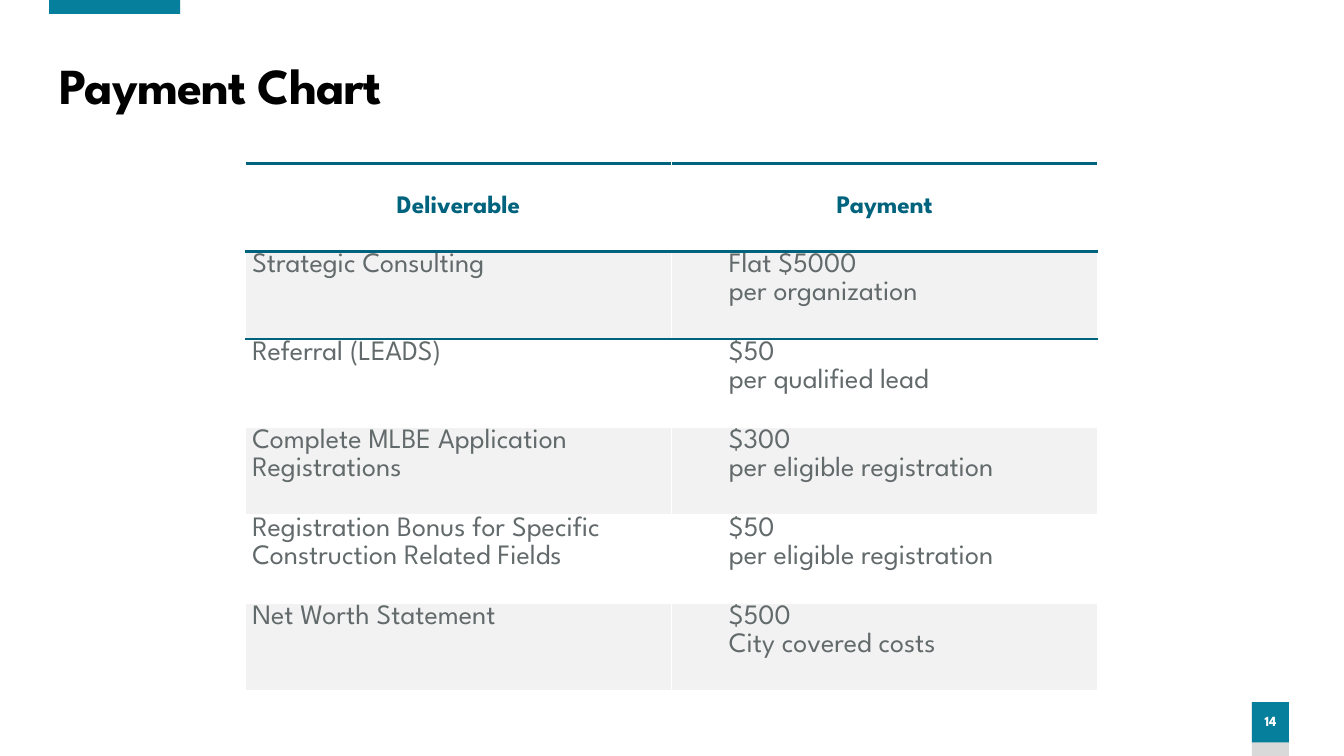
from lxml import etree
from pptx import Presentation
from pptx import util as u
from pptx.dml.color import RGBColor
from pptx.enum import shapes, text
from pptx.oxml.ns import qn

Pt = u.Pt
TEAL = RGBColor(0x06, 0x7F, 0x9C)
DEEP = RGBColor(0x00, 0x63, 0x7E)
GREY = RGBColor(0x63, 0x6A, 0x6B)
BAND = RGBColor(0xF2, 0xF2, 0xF2)
FOOT = RGBColor(0xD9, 0xD9, 0xD9)
WHITE = RGBColor(0xFF, 0xFF, 0xFF)
BLACK = RGBColor(0, 0, 0)
FACE = "League Spartan"
MID = text.MSO_ANCHOR.MIDDLE
MARGIN = dict(margin_left=Pt(5), margin_right=Pt(5), margin_top=0, margin_bottom=0)

ROWS = [
    ("Deliverable", "Payment"),
    ("Strategic Consulting", "Flat $5000\nper organization"),
    ("Referral (LEADS)", "$50\nper qualified lead"),
    ("Complete MLBE Application Registrations", "$300\nper eligible registration"),
    ("Registration Bonus for Specific Construction Related Fields",
     "$50\nper eligible registration"),
    ("Net Worth Statement", "$500\nCity covered costs"),
]


def put(item, vals):
    for key, val in vals.items():
        setattr(item, key, val)


def write(frame, words, size, color, bold=True, indent=0, **form):
    """Fill a text frame, one paragraph per line of words."""
    for i, line in enumerate(words.split("\n")):
        para = frame.add_paragraph() if i else frame.paragraphs[0]
        put(para, form)
        if indent:
            props = para._p.get_or_add_pPr()
            props.set("lvl", "1")
            props.set("marL", str(Pt(indent)))
            props.set("indent", "0")
        run = para.add_run()
        run.text = line
        put(run.font, dict(name=FACE, size=Pt(size), bold=bold))
        run.font.color.rgb = color


def block(slide, x, y, w, h, color):
    box = slide.shapes.add_shape(shapes.MSO_SHAPE.RECTANGLE, Pt(x), Pt(y), Pt(w), Pt(h))
    box.shadow.inherit = False
    box.fill.solid()
    box.fill.fore_color.rgb = color
    box.line.fill.background()
    return box


def edge(cell, side, color, width):
    props = cell._tc.get_or_add_tcPr()
    line = etree.SubElement(props, qn("a:ln" + side), w=str(Pt(width)))
    fill = etree.SubElement(line, qn("a:solidFill"))
    etree.SubElement(fill, qn("a:srgbClr"), val=str(color))


def head(slide, x, y, w, h):
    # Accent tab at the top edge
    block(slide, x, 0, 93.6, 10, TEAL)
    # Title
    frame = slide.shapes.add_textbox(Pt(x), Pt(y), Pt(w), Pt(h)).text_frame
    put(frame, dict(word_wrap=True, vertical_anchor=MID))
    write(frame, "Payment Chart", 36, BLACK, line_spacing=0.9)
    frame.paragraphs[0].runs[0].font._element.set("spc", "-60")


def badge(slide, x, y, w, h):
    # Page number on a grey foot
    block(slide, x, y, w, h, FOOT)
    frame = block(slide, x, y, w, 28.8, TEAL).text_frame
    put(frame, dict(margin_left=0, margin_right=0, vertical_anchor=MID))
    write(frame, "14", 10, WHITE, alignment=text.PP_ALIGN.CENTER, line_spacing=0.9)


def chart(slide, x, y, w, h):
    # Payment table: equal rows and columns
    grid = slide.shapes.add_table(len(ROWS), 2, Pt(x), Pt(y), Pt(w), Pt(h)).table
    put(grid, dict(first_row=False, horz_banding=False))
    for col in grid.columns:
        col.width = Pt(w / 2)
    for r, pair in enumerate(ROWS):
        grid.rows[r].height = Pt(h / len(ROWS))
        for c, words in enumerate(pair):
            cell = grid.cell(r, c)
            # Teal rules bound the header and the first body row
            for side, rule in (("L", False), ("R", False), ("T", r < 3), ("B", r < 2)):
                edge(cell, side, DEEP if rule else WHITE, 2.25 if rule else 1)
            if r % 2:
                cell.fill.solid()
                cell.fill.fore_color.rgb = BAND
            else:
                cell.fill.background()
            if r == 0:
                cell.vertical_anchor = MID
                write(cell.text_frame, words, 18, DEEP, alignment=text.PP_ALIGN.CENTER)
            else:
                put(cell, MARGIN)
                write(cell.text_frame, words, 20, GREY, False, 36 * c, line_spacing=1.07)


def main():
    deck = Presentation()
    put(deck, dict(slide_width=Pt(960), slide_height=Pt(540)))
    slide = deck.slides.add_slide(deck.slide_layouts[6])
    badge(slide, 894.2, 501.5, 26.6, 38.5)
    head(slide, 35.2, 39.6, 880, 46.8)
    chart(slide, 175.2, 116.6, 609, 377)
    deck.save("out.pptx")


if __name__ == "__main__":
    main()
